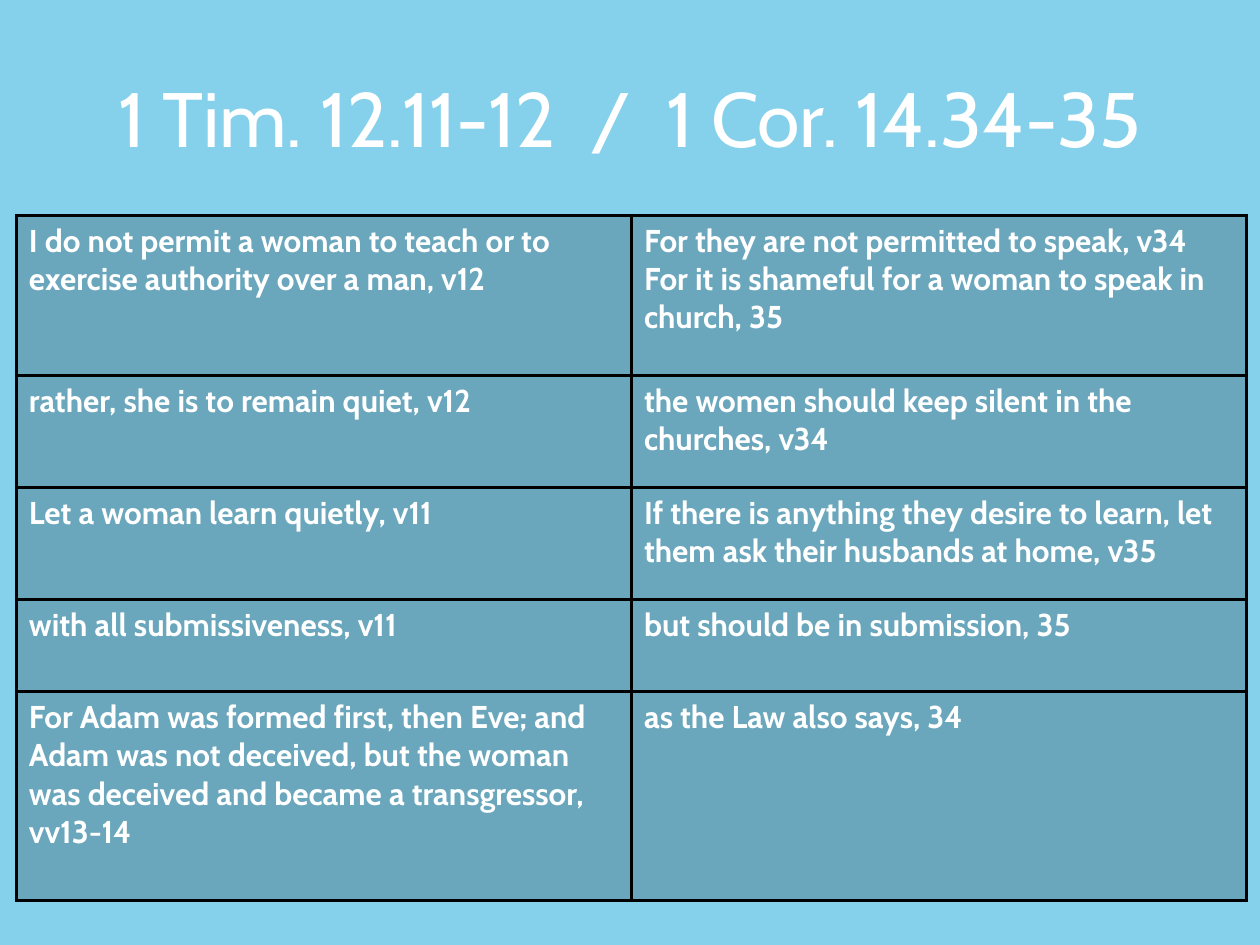
from pptx import Presentation
from pptx.dml.color import RGBColor
from pptx.enum.text import MSO_ANCHOR as Anchor, PP_ALIGN as Align
from pptx.oxml.ns import qn
from pptx.util import Cm, Pt
from lxml.etree import SubElement, Element

FONT = "Cabin"
SKY, WHITE, BLACK = "85D1EC", "FFFFFF", "000000"
COL_WIDTH = 12.4
ROW_HEIGHTS = [3.23, 2.26, 2.26, 1.85, 4.22]
VERSES = [
    (["I do not permit a woman to teach or to exercise authority over a man, v12"],
     ["For they are not permitted to speak, v34",
      "For it is shameful for a woman to speak in church, 35"]),
    (["rather, she is to remain quiet, v12"],
     ["the women should keep silent in the churches, v34"]),
    (["Let a woman learn quietly, v11"],
     ["If there is anything they desire to learn, let them ask their husbands at home, v35"]),
    (["with all submissiveness, v11"],
     ["but should be in submission, 35"]),
    (["For Adam was formed first, then Eve; and Adam was not deceived, "
      "but the woman was deceived and became a transgressor, vv13-14"],
     ["as the Law also says, 34"]),
]


def paint(color, value):
    color.rgb = RGBColor.from_string(value)


def fill_solid(fill, value):
    fill.solid()
    paint(fill.fore_color, value)


def write(tf, lines, size, bold=False, align=Align.LEFT):
    for i, line in enumerate(lines):
        p = tf.add_paragraph() if i else tf.paragraphs[0]
        p.alignment = align
        r = p.add_run()
        r.text = line
        r.font.name, r.font.size, r.font.bold = FONT, Pt(size), bold
        paint(r.font.color, WHITE)


def add_title(s, text):
    sp = s.shapes.add_textbox(Cm(1.27), Cm(0.76), Cm(22.86), Cm(3.18))
    tf = sp.text_frame
    tf.word_wrap = True
    tf.vertical_anchor = Anchor.MIDDLE
    write(tf, [text], 44, align=Align.CENTER)


def style_cell(cell):
    fill_solid(cell.fill, BLACK)
    pr = cell._tc.get_or_add_tcPr()
    tint = pr.find(qn("a:solidFill")).find(qn("a:srgbClr"))
    SubElement(tint, qn("a:alpha"), val="20000")
    for i, side in enumerate(("lnL", "lnR", "lnT", "lnB")):
        ln = Element(qn(f"a:{side}"), w=str(Pt(2.25)))
        SubElement(SubElement(ln, qn("a:solidFill")), qn("a:srgbClr"), val=BLACK)
        pr.insert(i, ln)


def add_verse_table(s):
    frame = s.shapes.add_table(len(VERSES), 2, Cm(0.33), Cm(4.34),
                               Cm(2 * COL_WIDTH), Cm(sum(ROW_HEIGHTS)))
    table = frame.table
    table.first_row = table.horz_banding = False
    for col in table.columns:
        col.width = Cm(COL_WIDTH)
    for row, height, verses in zip(table.rows, ROW_HEIGHTS, VERSES):
        row.height = Cm(height)
        for cell, lines in zip(row.cells, verses):
            style_cell(cell)
            write(cell.text_frame, lines, 18, bold=True)


def main():
    prs = Presentation()
    prs.slide_width, prs.slide_height = Cm(25.4), Cm(19.05)
    s = prs.slides.add_slide(prs.slide_layouts[6])
    fill_solid(s.background.fill, SKY)
    add_title(s, "1 Tim. 12.11-12  /  1 Cor. 14.34-35")
    add_verse_table(s)
    prs.save("out.pptx")


if __name__ == "__main__":
    main()
